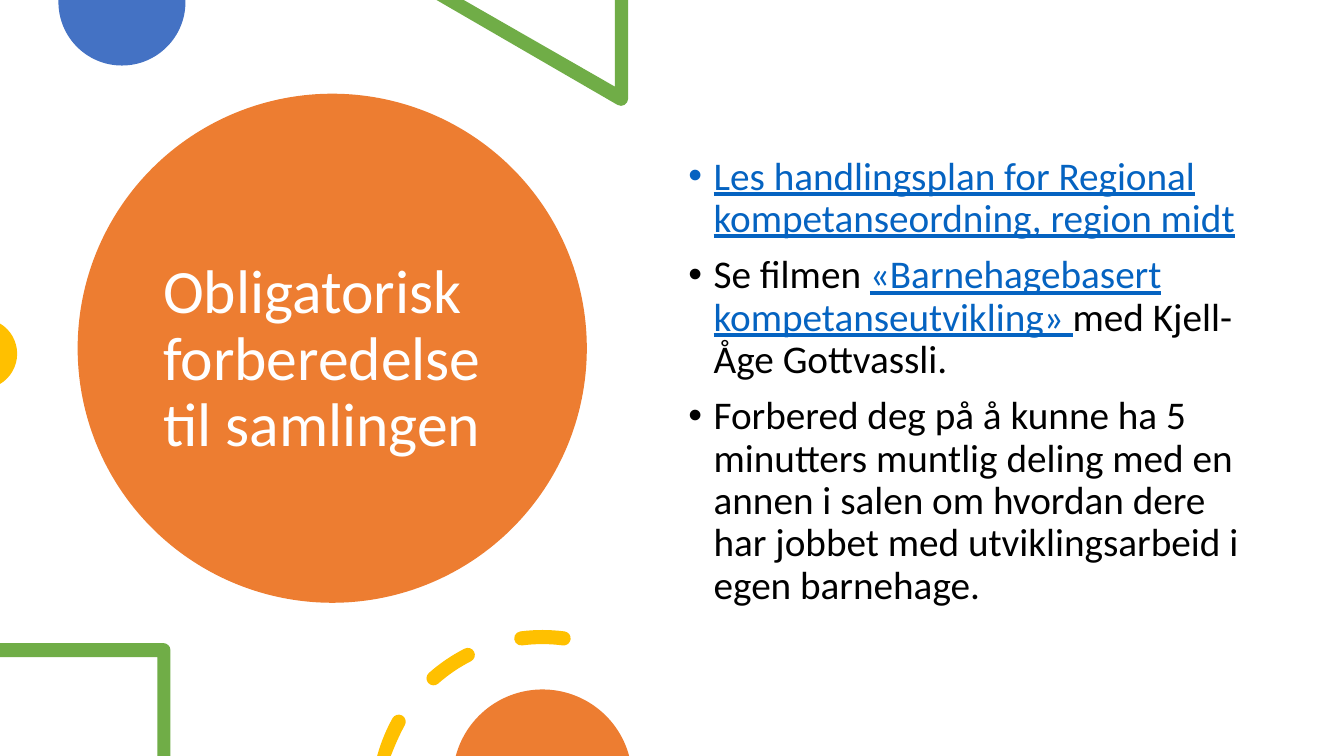
import math

import lxml.etree
import pptx
import pptx.dml.color
import pptx.enum.shapes
import pptx.enum.text
import pptx.oxml.ns
import pptx.util

PX = 9144  # EMU per px, 100 px to the inch
WIDTH, HEIGHT = 1333, 750

ORANGE = pptx.dml.color.RGBColor(0xED, 0x7D, 0x31)
BLUE = pptx.dml.color.RGBColor(0x44, 0x72, 0xC4)
GREEN = pptx.dml.color.RGBColor(0x70, 0xAD, 0x47)
YELLOW = pptx.dml.color.RGBColor(0xFF, 0xC0, 0x00)
LINK_BLUE = pptx.dml.color.RGBColor(0x05, 0x63, 0xC1)
WHITE = pptx.dml.color.RGBColor(0xFF, 0xFF, 0xFF)
BLACK = pptx.dml.color.RGBColor(0x00, 0x00, 0x00)

FONT = "Calibri"
TITLE = "Obligatorisk forberedelse til samlingen"
# Each task is a list of (text, is_link) runs.
TASKS = [
    [("Les handlingsplan for Regional kompetanseordning, region midt", True), (" ", False)],
    [
        ("Se filmen ", False),
        ("«Barnehagebasert kompetanseutvikling» ", True),
        ("med Kjell-Åge Gottvassli.", False),
    ],
    [
        (
            "Forbered deg på å kunne ha 5 minutters muntlig deling med en annen "
            "i salen om hvordan dere har jobbet med utviklingsarbeid i egen barnehage.",
            False,
        )
    ],
]

RING_CENTER, RING_RADIUS, DASH_HALF_WIDTH = (538, 795), 163, 7
CUT_DASH = (-164.6, -151)
WHOLE_DASHES = [(-131.5, -117), (-97.4, -82.6)]


def polar(center, radius, degrees):
    angle = math.radians(degrees)
    return (center[0] + radius * math.cos(angle), center[1] + radius * math.sin(angle))


def arc(center, radius, start, end):
    """Return a start point and Bézier steps; angles run clockwise from the right."""
    count = math.ceil(abs(end - start) / 90)
    sweep = (end - start) / count
    handle = 4 / 3 * math.tan(math.radians(sweep / 4))
    reach = radius * math.hypot(1, handle)
    lean = math.degrees(math.atan(handle))
    steps = [[polar(center, radius, start)]]
    for index in range(count):
        begin, finish = start + index * sweep, start + (index + 1) * sweep
        steps.append([
            polar(center, reach, begin + lean),
            polar(center, reach, finish - lean),
            polar(center, radius, finish),
        ])
    return steps


def lines(*points):
    return [[point] for point in points]


def ring_dash(start, end, is_cut=False):
    """Return a round-capped piece of the ring; a cut one starts flat at the slide's bottom."""
    first, last = (polar(RING_CENTER, RING_RADIUS, angle) for angle in (start, end))
    outline = arc(RING_CENTER, RING_RADIUS + DASH_HALF_WIDTH, start, end)
    outline += arc(last, DASH_HALF_WIDTH, end, end + 180)[1:]
    outline += arc(RING_CENTER, RING_RADIUS - DASH_HALF_WIDTH, end, start)[1:]
    if not is_cut:
        outline += arc(first, DASH_HALF_WIDTH, start + 180, start + 360)[1:]
    return [[(x, min(y, HEIGHT)) for x, y in step] for step in outline]


def paint(shape, color):
    shape.shadow.inherit = False
    shape.fill.solid()
    shape.fill.fore_color.rgb = color
    shape.line.fill.background()


def merge_curves(shape, steps):
    """Turn each three-point step of the drawn outline into one Bézier segment."""
    segments = iter(list(shape._element.iter(pptx.oxml.ns.qn("a:lnTo"))))
    for step in steps:
        group = [next(segments) for _ in step]
        if len(group) == 3:
            group[0].tag = pptx.oxml.ns.qn("a:cubicBezTo")
            for segment in group[1:]:
                group[0].append(segment[0])
                segment.getparent().remove(segment)


def add_outline(slide, color, *contours):
    builder = None
    for contour in contours:
        points = [(round(x * PX), round(y * PX)) for step in contour for x, y in step]
        if builder is None:
            builder = slide.shapes.build_freeform(*points[0], scale=1.0)
        else:
            builder.move_to(*points[0])
        builder.add_line_segments(points[1:], close=True)
    shape = builder.convert_to_shape()
    merge_curves(shape, [step for contour in contours for step in contour[1:]])
    paint(shape, color)


def add_circle(slide, left, top, diameter, color):
    circle = slide.shapes.add_shape(
        pptx.enum.shapes.MSO_SHAPE.OVAL,
        left * PX, top * PX, diameter * PX, diameter * PX,
    )
    paint(circle, color)


def add_text_frame(slide, left, top, width, height, anchor):
    box = slide.shapes.add_textbox(left * PX, top * PX, width * PX, height * PX)
    box.text_frame.word_wrap = True
    box.text_frame.vertical_anchor = anchor
    return box.text_frame


def add_run(paragraph, text, size, color, underline=False):
    run = paragraph.add_run()
    run.text = text
    run.font.name = FONT
    run.font.size = pptx.util.Pt(size)
    run.font.color.rgb = color
    run.font.underline = underline


def add_bullet(paragraph, indent):
    properties = paragraph._p.get_or_add_pPr()
    properties.set("marL", str(indent * PX))
    properties.set("indent", str(-indent * PX))
    font = lxml.etree.SubElement(properties, pptx.oxml.ns.qn("a:buFont"))
    font.set("typeface", "Arial")
    bullet = lxml.etree.SubElement(properties, pptx.oxml.ns.qn("a:buChar"))
    bullet.set("char", "•")


def add_title(slide):
    frame = add_text_frame(slide, 152, 135, 354, 445, pptx.enum.text.MSO_ANCHOR.MIDDLE)
    paragraph = frame.paragraphs[0]
    paragraph.line_spacing = 0.9
    add_run(paragraph, TITLE, 44, WHITE)


def add_tasks(slide):
    frame = add_text_frame(slide, 673, 150, 575, 535, pptx.enum.text.MSO_ANCHOR.TOP)
    for index, runs in enumerate(TASKS):
        paragraph = frame.add_paragraph() if index else frame.paragraphs[0]
        paragraph.line_spacing = 0.9
        paragraph.space_before = pptx.util.Pt(10)
        add_bullet(paragraph, 25)
        for text, is_link in runs:
            add_run(paragraph, text, 28, LINK_BLUE if is_link else BLACK, is_link)


def add_top_decorations(slide):
    blue_disc = lines((184, 0)) + arc((121, 2), 63, 0, 180) + lines((58, 0))
    triangle = lines((623, 0), (610, 0), (610, 86), (460, 0), (433, 0))
    triangle += arc((616, 98), 7, 120, 0)
    add_outline(slide, BLUE, blue_disc)
    add_outline(slide, GREEN, triangle)
    add_outline(slide, YELLOW, arc((-18, 351), 35, -59, 59))


def add_bottom_decorations(slide):
    square = lines((0, 638)) + arc((162, 645), 7, -90, 0)
    square += lines((169, 750), (156, 750), (156, 652), (0, 652))
    dashes = [ring_dash(*CUT_DASH, is_cut=True)]
    dashes += [ring_dash(*angles) for angles in WHOLE_DASHES]
    add_outline(slide, GREEN, square)
    add_outline(slide, YELLOW, *dashes)
    add_outline(slide, ORANGE, arc((538, 773), 89, -165, -15))


def main():
    presentation = pptx.Presentation()
    presentation.slide_width = WIDTH * PX
    presentation.slide_height = HEIGHT * PX
    slide = presentation.slides.add_slide(presentation.slide_layouts[6])
    add_circle(slide, 77, 93, 505, ORANGE)
    add_title(slide)
    add_top_decorations(slide)
    add_tasks(slide)
    add_bottom_decorations(slide)
    presentation.save("out.pptx")


if __name__ == "__main__":
    main()
